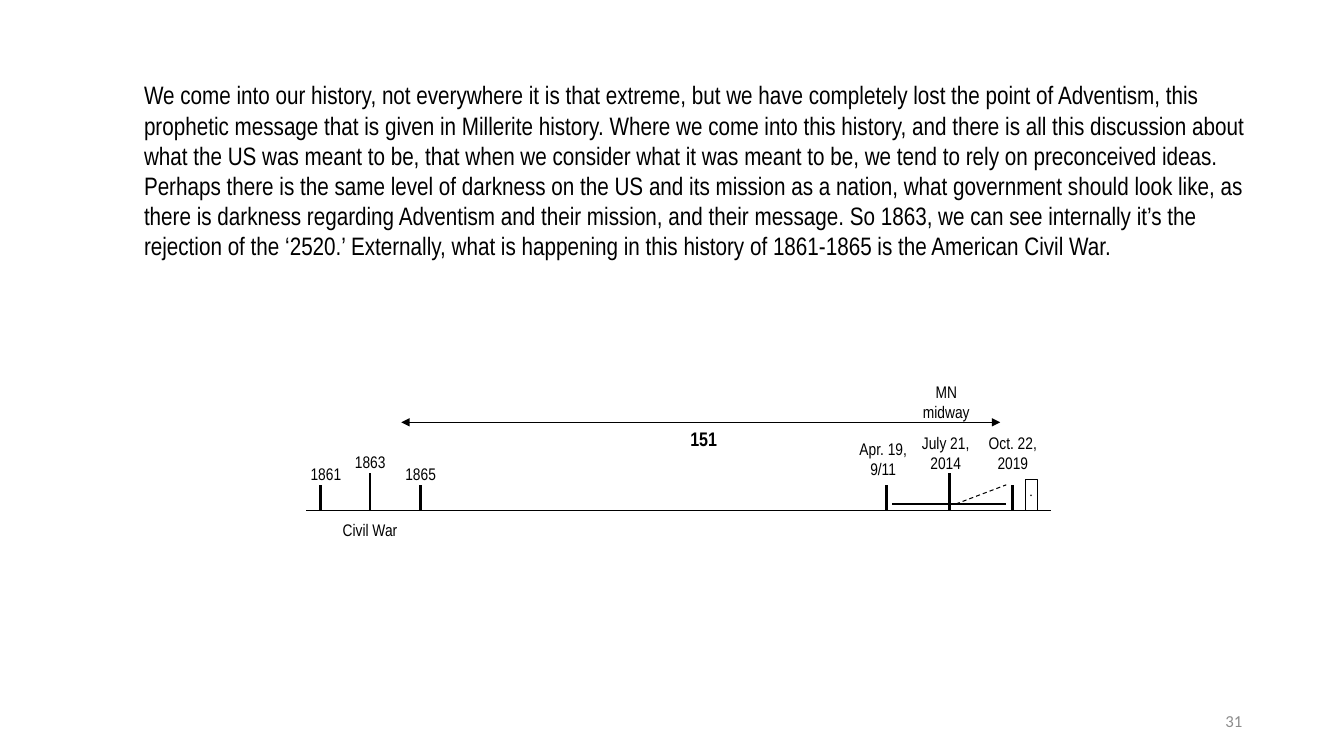
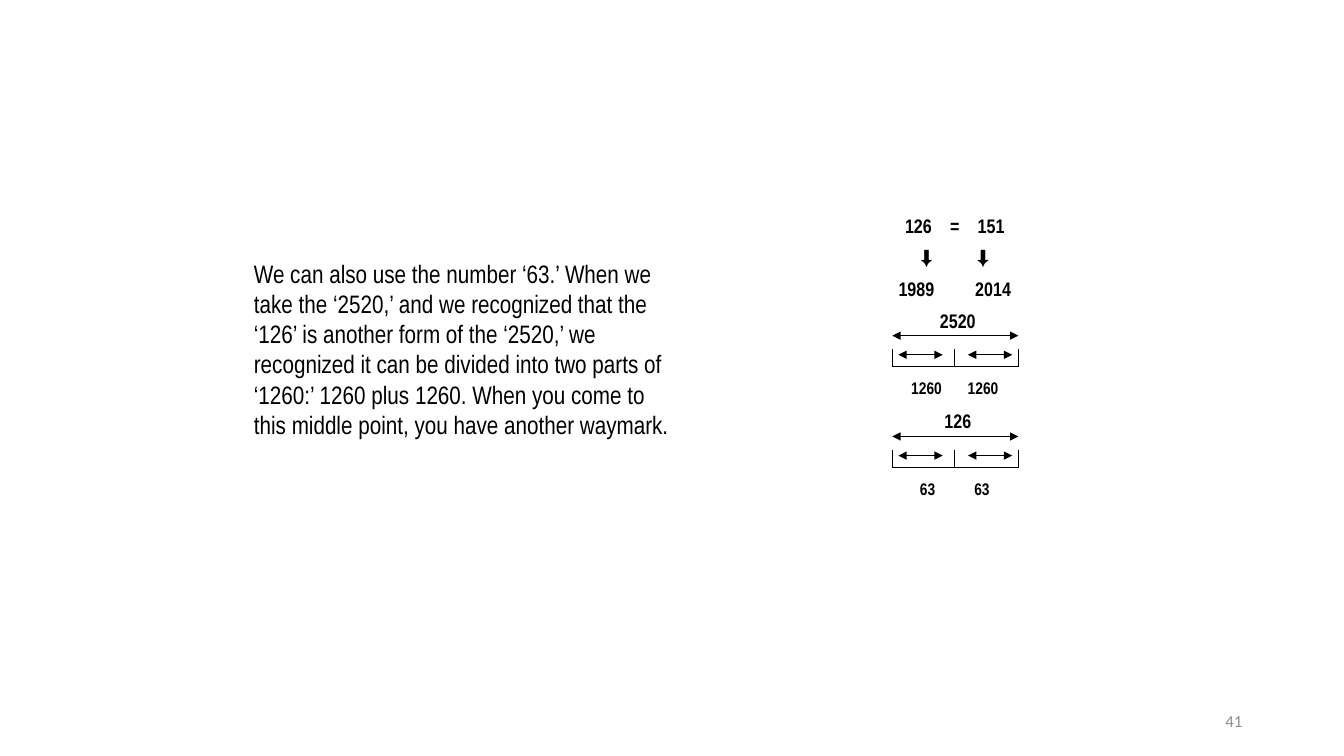
"""Build two timeline slides: the 1861-2019 history and the halves of 2520 and 126."""
from lxml.etree import SubElement
from pptx import Presentation
from pptx.dml.color import RGBColor
from pptx.enum.dml import MSO_LINE
from pptx.enum.shapes import MSO_CONNECTOR, MSO_SHAPE
from pptx.enum.text import MSO_ANCHOR, MSO_AUTO_SIZE, PP_ALIGN
from pptx.oxml.ns import qn
from pptx.util import Inches, Pt

BLACK, GRAY = "000000", "8C8C8C"
NARROW = "Arial Narrow"
MARGINS = ("margin_left", "margin_top", "margin_right", "margin_bottom")
TIGHT = {"vertical_anchor": MSO_ANCHOR.TOP, **dict.fromkeys(MARGINS, Inches(0.04))}

LABEL = {
    "font": {"name": NARROW, "size": Pt(12), "bold": False},
    "align": PP_ALIGN.CENTER,
    "frame": TIGHT,
    "color": BLACK,
}
LEFT_LABEL = {**LABEL, "align": PP_ALIGN.LEFT}
BOLD_LABEL = {**LABEL, "font": {"name": NARROW, "size": Pt(12), "bold": True}}
NUMBER = {**LABEL, "font": {"name": NARROW, "size": Pt(14), "bold": True}}
ARROW = {**LABEL, "font": {"name": "Arial", "size": Pt(14), "bold": True}}
MARK = {**LEFT_LABEL, "font": {"name": "Times New Roman", "size": Pt(10)}}
BODY = {
    "font": {"name": NARROW, "size": Pt(18)},
    "align": PP_ALIGN.LEFT,
    "frame": {"auto_size": MSO_AUTO_SIZE.SHAPE_TO_FIT_TEXT},
    "color": BLACK,
}
FOOTER = {
    "font": {"name": "Calibri", "size": Pt(12)},
    "align": PP_ALIGN.RIGHT,
    "frame": {"vertical_anchor": MSO_ANCHOR.MIDDLE},
    "color": GRAY,
}


def add_text(page, text, area, style, outline=None):
    left, top, width, height = [Inches(length) for length in area]
    if outline:
        box = page.shapes.add_shape(MSO_SHAPE.RECTANGLE, left, top, width, height)
        box.shadow.inherit = False
        box.fill.background()
        box.line.color.rgb = RGBColor.from_string(BLACK)
        box.line.width = Pt(outline)
    else:
        box = page.shapes.add_textbox(left, top, width, height)
    frame = box.text_frame
    frame.word_wrap = True
    for key, value in style["frame"].items():
        setattr(frame, key, value)
    for index, line in enumerate(text.split("\n")):
        para = frame.add_paragraph() if index else frame.paragraphs[0]
        para.alignment = style["align"]
        span = para.add_run()
        span.text = line
        span.font.color.rgb = RGBColor.from_string(style["color"])
        for key, value in style["font"].items():
            setattr(span.font, key, value)


def add_line(page, start, end, width=0.75, dash=None, arrows=False):
    points = [Inches(length) for length in (*start, *end)]
    connector = page.shapes.add_connector(MSO_CONNECTOR.STRAIGHT, *points)
    connector.line.color.rgb = RGBColor.from_string(BLACK)
    connector.line.width = Pt(width)
    connector.line.dash_style = dash
    properties = connector._element.spPr
    if arrows:
        for tip in ("a:headEnd", "a:tailEnd"):
            SubElement(properties.get_or_add_ln(), qn(tip), type="triangle")
    SubElement(properties, qn("a:effectLst"))


deck = Presentation()
deck.slide_width, deck.slide_height = Inches(13.33), Inches(7.5)

slides = [
    ("31", (1.33, 0.74, 11.39, 1.92),
     "We come into our history, not everywhere it is that extreme, but we have completely lost the point of "
     "Adventism, this prophetic message that is given in Millerite history. Where we come into this history, "
     "and there is all this discussion about what the US was meant to be, that when we consider what it was "
     "meant to be, we tend to rely on preconceived ideas. Perhaps there is the same level of darkness on the "
     "US and its mission as a nation, what government should look like, as there is darkness regarding "
     "Adventism and their mission, and their message. So 1863, we can see internally it’s the rejection of "
     "the ‘2520.’ Externally, what is happening in this history of 1861-1865 is the American Civil War."),
    ("41", (2.42, 2.51, 4.34, 1.92),
     "We can also use the number ‘63.’ When we take the ‘2520,’ and we recognized that the ‘126’ is another "
     "form of the ‘2520,’ we recognized it can be divided into two parts of ‘1260:’ 1260 plus 1260. When you "
     "come to this middle point, you have another waymark."),
]
pages = []
for number, body_area, body in slides:
    page = deck.slides.add_slide(deck.slide_layouts[6])
    add_text(page, number, (9.42, 6.95, 3, 0.4), FOOTER)
    add_text(page, body, body_area, BODY)
    pages.append(page)
history, halves = pages

baseline, span_top, progress_top = 5.06, 4.19, 5
short_tick, tall_tick = 0.25, 0.37
add_line(history, (3.04, baseline), (10.42, baseline))
add_line(history, (3.98, span_top), (9.92, span_top), arrows=True)
add_line(history, (8.85, progress_top), (9.98, progress_top))
add_line(history, (9.48, progress_top), (9.98, baseline - short_tick), dash=MSO_LINE.DASH)

for first, middle, last in [(3.18, 3.67, 4.17), (8.79, 9.42, 10.04)]:
    for x, tick in [(first, short_tick), (middle, tall_tick), (last, short_tick)]:
        add_line(history, (x, baseline), (x, baseline - tick), width=2)

for text, area, style in [
    ("1861", (3.04, 4.56, 0.44, 0.25), LEFT_LABEL),
    ("1863", (3.48, 4.44, 0.39, 0.25), LEFT_LABEL),
    ("1865", (3.98, 4.56, 0.54, 0.25), LEFT_LABEL),
    ("Civil War", (3.17, 5.12, 1, 0.44), LABEL),
    ("Apr. 19,\n9/11", (8.48, 4.31, 0.56, 0.5), LABEL),
    ("July 21,\n2014", (9.1, 4.25, 0.56, 0.5), LABEL),
    ("Oct. 22,\n2019", (9.67, 4.25, 0.75, 0.5), LABEL),
    ("MN\nmidway", (9.04, 3.75, 0.69, 0.5), LABEL),
    ("151", (6.23, span_top, 1.5, 0.31), NUMBER),
]:
    add_text(history, text, area, style)
add_text(history, ".", (10.17, 4.75, 0.12, 0.31), MARK, outline=0.25)

center, label_width, label_height = 9.47, 0.56, 0.31
label_left = center - label_width / 2
add_text(halves, "=", (label_left, 2.08, label_width, label_height), NUMBER)
for left_text, right_text, top, offset, style in [
    ("126", "151", 2.08, 0.36, NUMBER),
    ("⬇", "⬇", 2.39, 0.28, ARROW),
    ("1989", "2014", 2.71, 0.38, NUMBER),
    ("1260", "1260", 3.71, 0.28, BOLD_LABEL),
    ("63", "63", 4.71, 0.27, BOLD_LABEL),
]:
    for text, shift in [(left_text, -offset), (right_text, offset)]:
        add_text(halves, text, (label_left + shift, top, label_width, label_height), style)

bracket_left, bracket_right = 8.85, 10.1
arrow_inset, arrow_length = 0.06, 0.44
left_arrow = bracket_left + arrow_inset
right_arrow = bracket_right - arrow_inset - arrow_length
for total, top in [("2520", 3.02), ("126", 4.02)]:
    total_arrow, post_top, half_arrow, floor = [top + drop for drop in (0.31, 0.44, 0.5, 0.62)]
    add_text(halves, total, (9.22, top, label_width, label_height), NUMBER)
    add_line(halves, (bracket_left, total_arrow), (bracket_right, total_arrow), arrows=True)
    add_line(halves, (bracket_left, floor), (bracket_right, floor))
    for x in (bracket_left, center, bracket_right):
        add_line(halves, (x, post_top), (x, floor))
    for x in (left_arrow, right_arrow):
        add_line(halves, (x, half_arrow), (x + arrow_length, half_arrow), arrows=True)

deck.save("out.pptx")
